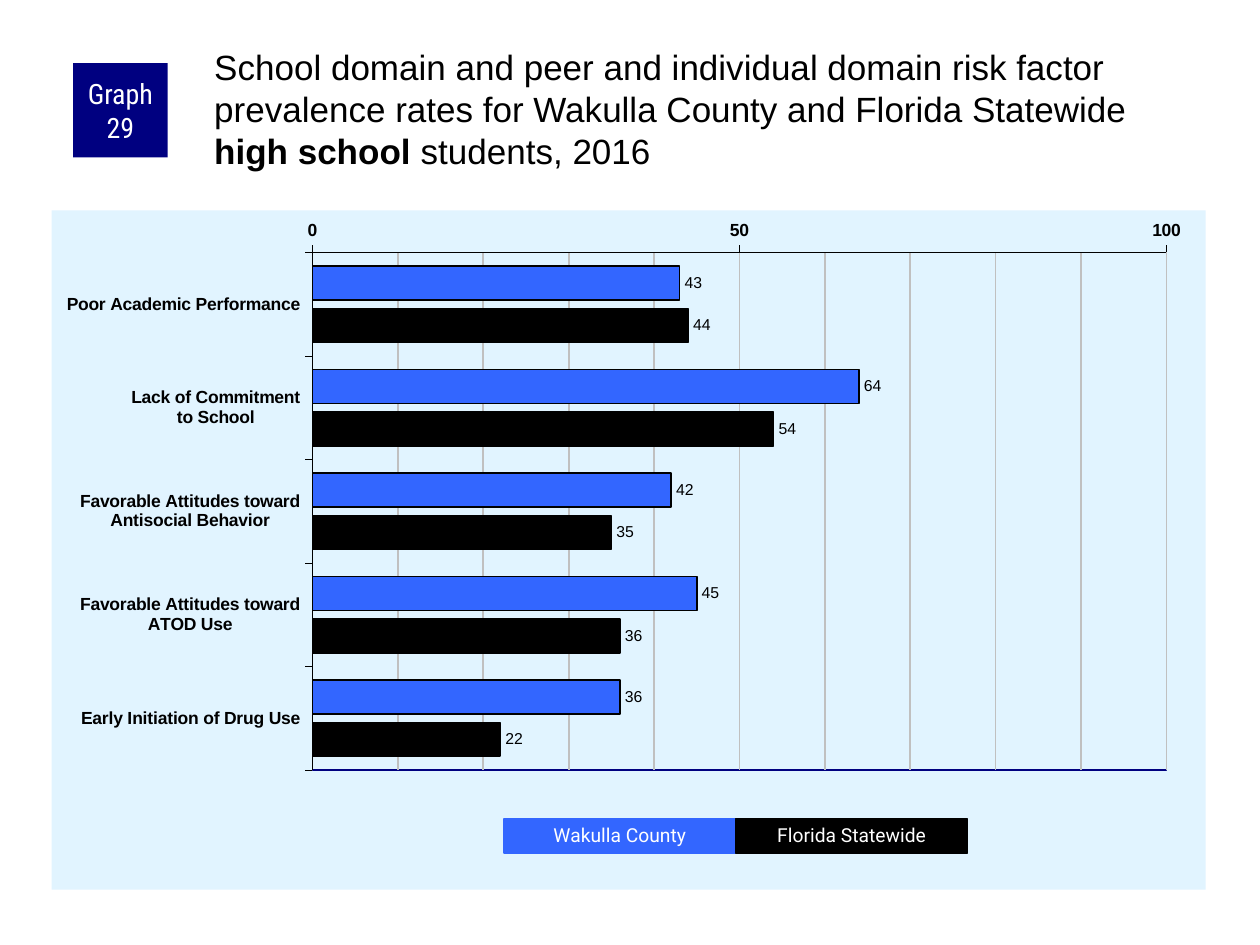
import copy
import pptx
import pptx.chart.data
import pptx.dml.color
import pptx.enum.chart
import pptx.enum.shapes
import pptx.enum.text
import pptx.oxml
import pptx.oxml.ns
import pptx.util
from dataclasses import dataclass

PX = 9144


@dataclass(frozen=True)
class Theme:
    navy: str = "000080"
    blue: str = "3366FF"
    black: str = "000000"
    white: str = "FFFFFF"
    panel: str = "E1F4FF"
    grid: str = "C0C0C0"
    body: str = "Arial"
    key: str = "Roboto"
    badge: str = "Roboto Condensed"
    title_size: int = 20
    badge_size: int = 16
    key_size: int = 11
    axis_size: int = 10
    label_size: int = 9


THEME = Theme()
CATEGORIES = [
    "Poor Academic Performance",
    "Lack of Commitment\nto School",
    "Favorable Attitudes toward\nAntisocial Behavior",
    "Favorable Attitudes toward\nATOD Use",
    "Early Initiation of Drug Use",
]
SERIES = [
    ("Wakulla County", THEME.blue, (43, 64, 42, 45, 36)),
    ("Florida Statewide", THEME.black, (44, 54, 35, 36, 22)),
]


def emu(*lengths):
    return [length * PX for length in lengths]


def rgb(color):
    return pptx.dml.color.RGBColor.from_string(color)


def set_all(target, **values):
    for name, value in values.items():
        setattr(target, name, value)


def style_font(font, name, size, color, bold=False):
    set_all(font, name=name, size=pptx.util.Pt(size), bold=bold)
    font.color.rgb = rgb(color)


def style_line(line, color, width):
    line.color.rgb = rgb(color)
    line.width = pptx.util.Pt(width)


def set_insets(tf, left, top, right, bottom):
    left, top, right, bottom = emu(left, top, right, bottom)
    set_all(tf, margin_left=left, margin_top=top, margin_right=right, margin_bottom=bottom)


def add_title(s, box):
    title = s.shapes.title
    title.left, title.top, title.width, title.height = emu(*box)
    tf = title.text_frame
    set_all(tf, word_wrap=True, auto_size=pptx.enum.text.MSO_AUTO_SIZE.NONE,
            vertical_anchor=pptx.enum.text.MSO_ANCHOR.TOP)
    set_insets(tf, 3, 3, 0, 0)
    p = tf.paragraphs[0]
    p.alignment = pptx.enum.text.PP_ALIGN.LEFT
    for text, bold in (
        ("School domain and peer and individual domain risk factor prevalence rates "
         "for Wakulla County and Florida Statewide ", False),
        ("high school", True),
        (" students, 2016", False),
    ):
        r = p.add_run()
        r.text = text
        style_font(r.font, THEME.body, THEME.title_size, THEME.black, bold)


def add_label_box(s, box, text, fill, font_name, size):
    sp = s.shapes.add_shape(pptx.enum.shapes.MSO_SHAPE.RECTANGLE, *emu(*box))
    sp.shadow.inherit = False
    sp.fill.solid()
    sp.fill.fore_color.rgb = rgb(fill)
    sp.line.fill.background()
    tf = sp.text_frame
    set_all(tf, word_wrap=True, vertical_anchor=pptx.enum.text.MSO_ANCHOR.MIDDLE)
    p = tf.paragraphs[0]
    p.alignment = pptx.enum.text.PP_ALIGN.CENTER
    r = p.add_run()
    r.text = text
    style_font(r.font, font_name, size, THEME.white)
    return sp


def add_badge(s, box):
    sp = add_label_box(s, box, "Graph 29", THEME.navy, THEME.badge, THEME.badge_size)
    set_insets(sp.text_frame, 5, 0, 5, 0)


def add_key(s, box):
    left, top, width, height = box
    step = width // len(SERIES)
    for i, (name, color, _) in enumerate(SERIES):
        sp = add_label_box(s, (left + i * step, top, step, height), name, color,
                           THEME.key, THEME.key_size)
        style_line(sp.line, color, 0.75)
        tf = sp.text_frame
        tf.auto_size = pptx.enum.text.MSO_AUTO_SIZE.SHAPE_TO_FIT_TEXT
        tf.paragraphs[0].line_spacing = 0.9


def chart_xml(body):
    return pptx.oxml.parse_xml(body.replace(">", f" {pptx.oxml.ns.nsdecls('c', 'a')}>", 1))


def format_chart_areas(chart, plot_box):
    space = chart.element
    panel = chart_xml(
        f'<c:spPr><a:solidFill><a:srgbClr val="{THEME.panel}"/></a:solidFill>'
        '<a:ln><a:noFill/></a:ln></c:spPr>')
    space.find(pptx.oxml.ns.qn("c:chart")).addnext(panel)
    area = space.find(".//" + pptx.oxml.ns.qn("c:plotArea"))
    for old in area.findall(pptx.oxml.ns.qn("c:layout")):
        area.remove(old)
    sides = "".join(f'<c:{name} val="{value}"/>' for name, value in zip("xywh", plot_box))
    area.insert(0, chart_xml(
        '<c:layout><c:manualLayout><c:layoutTarget val="inner"/>'
        f'<c:xMode val="edge"/><c:yMode val="edge"/>{sides}</c:manualLayout></c:layout>'))
    area.append(chart_xml(
        '<c:spPr><a:noFill/><a:ln w="12700"><a:solidFill>'
        f'<a:srgbClr val="{THEME.navy}"/></a:solidFill></a:ln></c:spPr>'))


def format_axes(chart):
    enums = pptx.enum.chart
    cat, val = chart.category_axis, chart.value_axis
    for axis in (cat, val):
        set_all(axis, major_tick_mark=enums.XL_TICK_MARK.OUTSIDE,
                minor_tick_mark=enums.XL_TICK_MARK.NONE)
        style_font(axis.tick_labels.font, THEME.body, THEME.axis_size, THEME.black, True)
        style_line(axis.format.line, THEME.black, 0.25)
    set_all(cat, reverse_order=True, crosses=enums.XL_AXIS_CROSSES.MAXIMUM)
    set_all(val, minimum_scale=0, maximum_scale=100, major_unit=50, minor_unit=10,
            has_major_gridlines=True, has_minor_gridlines=True)
    style_line(val.major_gridlines.format.line, THEME.grid, 1)
    plot_area = chart.element.find(".//" + pptx.oxml.ns.qn("c:plotArea"))
    major, minor = (plot_area.find(".//" + pptx.oxml.ns.qn(f"c:{kind}Gridlines"))
                    for kind in ("major", "minor"))
    minor.extend(copy.deepcopy(list(major)))


def add_risk_chart(s, box):
    enums = pptx.enum.chart
    data = pptx.chart.data.CategoryChartData()
    data.categories = CATEGORIES
    for name, _, values in SERIES:
        data.add_series(name, values)
    chart = s.shapes.add_chart(enums.XL_CHART_TYPE.BAR_CLUSTERED, *emu(*box), data).chart
    set_all(chart, has_title=False, has_legend=False)
    style_font(chart.font, THEME.body, THEME.axis_size, THEME.black)
    plot = chart.plots[0]
    set_all(plot, gap_width=80, overlap=-25, vary_by_categories=False)
    for series, (_, color, _) in zip(plot.series, SERIES):
        series.format.fill.solid()
        series.format.fill.fore_color.rgb = rgb(color)
        style_line(series.format.line, THEME.black, 1)
        labels = series.data_labels
        set_all(labels, show_value=True, position=enums.XL_LABEL_POSITION.OUTSIDE_END)
        style_font(labels.font, THEME.body, THEME.label_size, THEME.black)
    format_axes(chart)
    format_chart_areas(chart, (0.226, 0.062, 0.74, 0.762))


def main():
    prs = pptx.Presentation()
    prs.slide_width, prs.slide_height = emu(1000, 750)
    s = prs.slides.add_slide(prs.slide_layouts[5])
    add_risk_chart(s, (41, 167, 916, 539))
    add_badge(s, (58, 50, 75, 75))
    add_title(s, (167, 33, 792, 83))
    add_key(s, (400, 650, 368, 27))
    prs.save("out.pptx")


if __name__ == "__main__":
    main()
